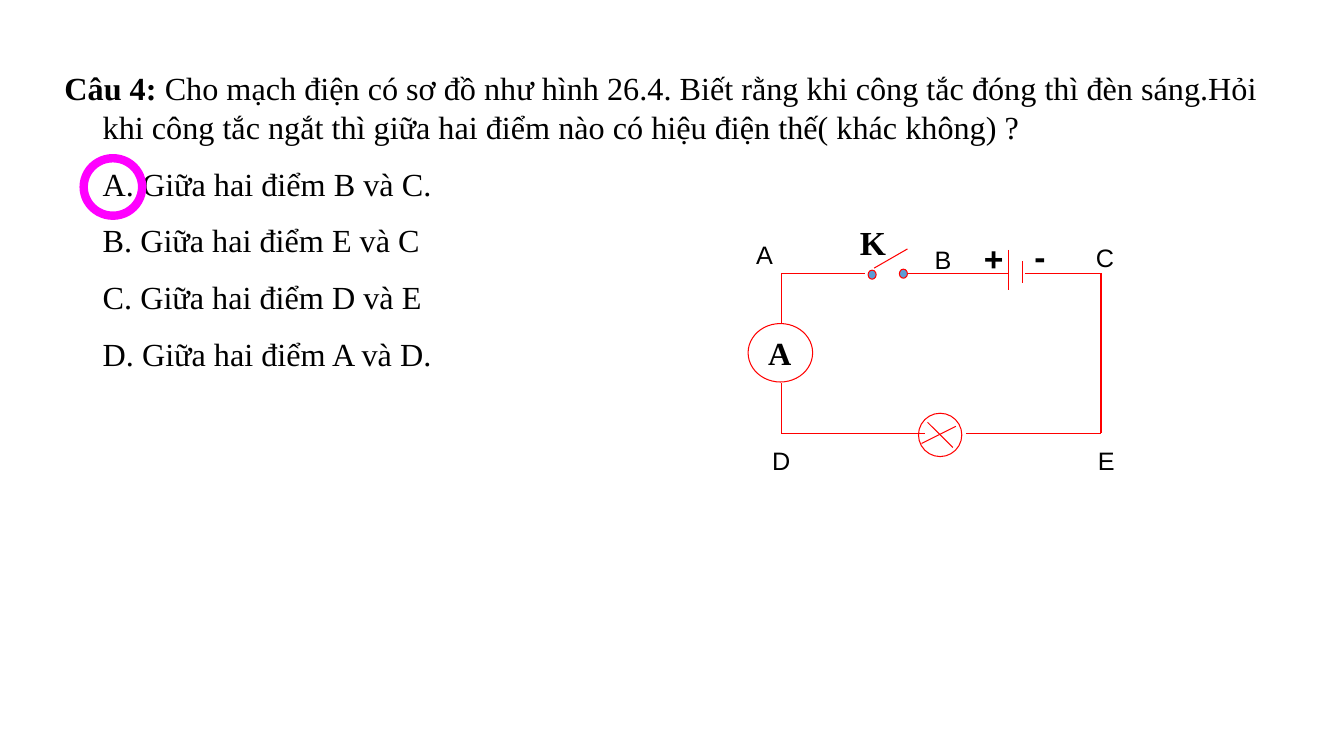
"""Build a quiz slide with a question, its answers and a circuit diagram."""
import lxml.etree
import pptx
import pptx.dml.color
import pptx.enum.shapes
import pptx.enum.text
import pptx.oxml.ns
import pptx.util
from dataclasses import dataclass
from pptx.util import Inches


@dataclass(frozen=True)
class Theme:
    text: str = "000000"
    wire: str = "FF0000"
    contact: str = "5B9BD5"
    answer: str = "FF00FF"
    serif: str = "Times New Roman"
    sans: str = "Arial"
    body_size: int = 23
    point_size: int = 18
    symbol_size: int = 24
    wire_width: float = 0.75
    answer_width: float = 6


theme = Theme()


def style_run(run, font, size, bold=False):
    """Apply a typeface, size and weight to a run."""
    run.font.name = font
    run.font.size = pptx.util.Pt(size)
    run.font.bold = bold
    run.font.color.rgb = pptx.dml.color.RGBColor.from_string(theme.text)


def add_ring(shapes, box, color, width, fill=None):
    """Add an outlined ellipse, filled when a colour is given."""
    shape = shapes.add_shape(pptx.enum.shapes.MSO_SHAPE.OVAL, *map(Inches, box))
    shape.shadow.inherit = False
    shape.line.color.rgb = pptx.dml.color.RGBColor.from_string(color)
    shape.line.width = pptx.util.Pt(width)
    if fill:
        shape.fill.solid()
        shape.fill.fore_color.rgb = pptx.dml.color.RGBColor.from_string(fill)
    else:
        shape.fill.background()


presentation = pptx.Presentation()
presentation.slide_width = Inches(13.33)
presentation.slide_height = Inches(7.5)
slide = presentation.slides.add_slide(presentation.slide_layouts[6])

question_label = "Câu 4: "
question = (
    "Cho mạch điện có sơ đồ như hình 26.4. Biết rằng khi công tắc đóng thì đèn sáng.Hỏi "
    "khi công tắc ngắt thì giữa hai điểm nào có hiệu điện thế( khác không) ?"
)
answers = [
    "\tA. Giữa hai điểm B và C.",
    "\tB. Giữa hai điểm E và C",
    "\tC. Giữa hai điểm D và E",
    "\tD. Giữa hai điểm A và D.",
]
question_box = slide.shapes.add_textbox(Inches(0.54), Inches(0.63), Inches(12.45), Inches(3.22))
frame = question_box.text_frame
frame.word_wrap = True
frame.text = "\n".join([question_label, *answers])
frame.paragraphs[0].add_run().text = question
for index, paragraph in enumerate(frame.paragraphs):
    properties = paragraph._p.get_or_add_pPr()
    properties.set("marL", str(Inches(0.38)))
    properties.set("indent", str(-Inches(0.38)))
    paragraph.space_before = pptx.util.Pt(13 if index else 0)
    for run in paragraph.runs:
        style_run(run, theme.serif, theme.body_size, bold=run.text == question_label)

circuit = slide.shapes.add_group_shape().shapes
left, right, top, bottom = 7.75, 10.92, 2.71, 4.3
wires = [
    (left, top, 8.58, top),
    (9, top, 10, top),
    (10.17, top, right, top),
    (right, top, right, bottom),
    (left, top, left, 3.21),
    (left, 3.8, left, bottom),
    (left, bottom, 9.17, bottom),
    (9.58, bottom, right, bottom),
]
switch_lever = [(8.67, 2.66, 9, 2.47)]
battery_plates = [(10, 2.48, 10, 2.88), (10.14, 2.59, 10.14, 2.81)]
lamp_cross = [(9.2, 4.19, 9.45, 4.44), (9.48, 4.23, 9.14, 4.4)]
for ends in wires + switch_lever + battery_plates + lamp_cross:
    connector = circuit.add_connector(
        pptx.enum.shapes.MSO_CONNECTOR.STRAIGHT, *map(Inches, ends)
    )
    connector.line.color.rgb = pptx.dml.color.RGBColor.from_string(theme.wire)
    connector.line.width = pptx.util.Pt(theme.wire_width)
    lxml.etree.SubElement(connector._element.spPr, pptx.oxml.ns.qn("a:effectLst"))

switch_contacts = [(8.92, 2.67, 0.08, 0.09), (8.61, 2.68, 0.08, 0.09)]
ammeter = (7.42, 3.21, 0.64, 0.58)
lamp = (9.11, 4.1, 0.43, 0.43)
for box in switch_contacts:
    add_ring(circuit, box, theme.wire, theme.wire_width, theme.contact)
for box in (ammeter, lamp):
    add_ring(circuit, box, theme.wire, theme.wire_width)

point_style = (theme.sans, theme.point_size, False)
pole_style = (theme.sans, theme.symbol_size, True)
labels = [
    ("A", (7.52, 3.26, 0.4, 0.49), (theme.serif, theme.body_size, True)),
    ("A", (7.4, 2.33, 0.52, 0.4), point_style),
    ("D", (7.56, 4.37, 0.42, 0.4), point_style),
    ("E", (10.79, 4.37, 0.42, 0.4), point_style),
    ("C", (10.77, 2.35, 0.48, 0.4), point_style),
    ("B", (9.17, 2.37, 0.48, 0.4), point_style),
    ("+", (9.66, 2.31, 0.42, 0.5), pole_style),
    ("-", (10.16, 2.29, 0.42, 0.5), pole_style),
    ("K", (8.43, 2.15, 0.33, 0.5), (theme.serif, theme.symbol_size, True)),
]
for text, box, style in labels:
    label = circuit.add_textbox(*map(Inches, box))
    label.text_frame.word_wrap = True
    label.text_frame.text = text
    style_run(label.text_frame.paragraphs[0].runs[0], *style)

add_ring(slide.shapes, (0.83, 1.57, 0.58, 0.57), theme.answer, theme.answer_width)

presentation.save("out.pptx")
